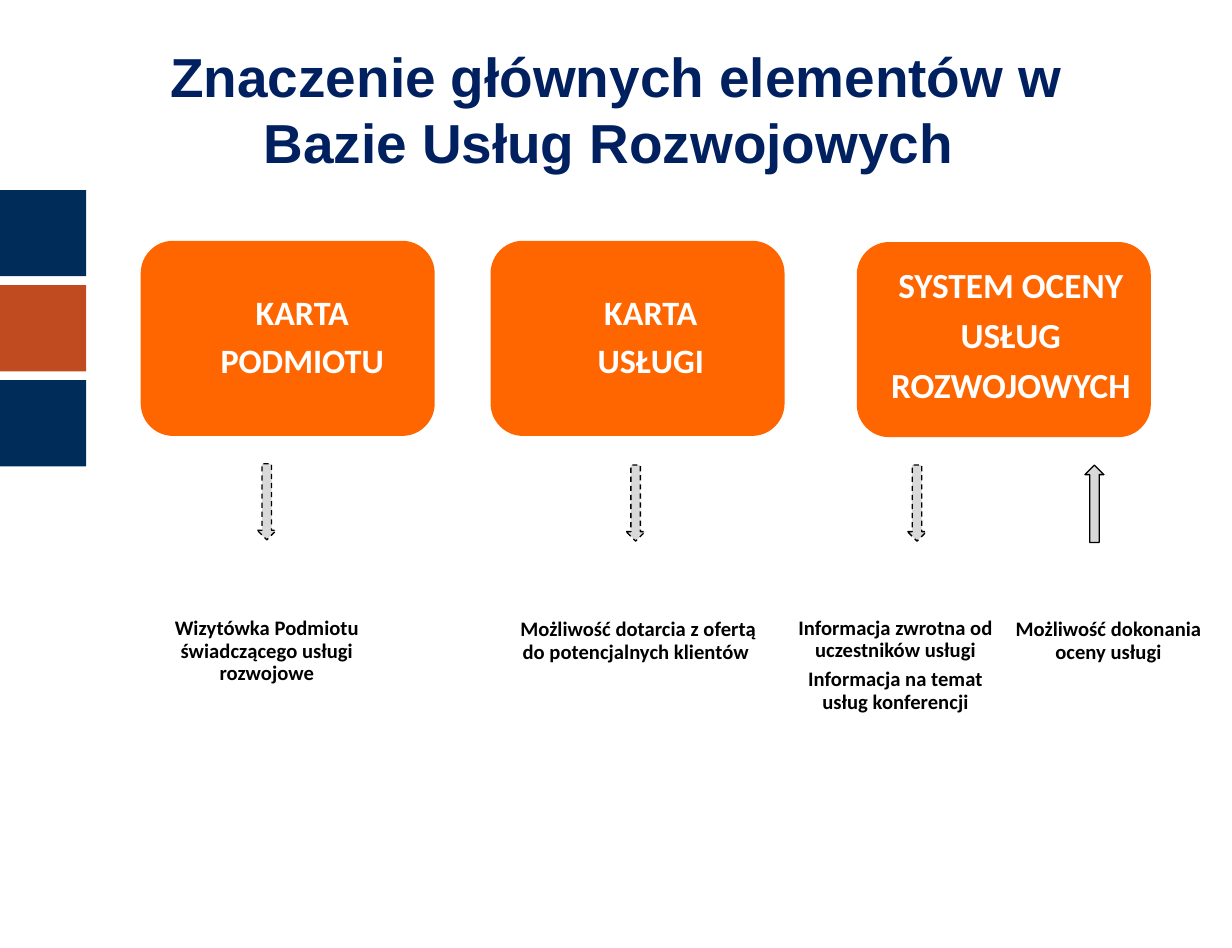
from pptx import Presentation
from pptx.dml.color import RGBColor
from pptx.enum.dml import MSO_LINE
from pptx.enum.shapes import MSO_SHAPE
from pptx.enum.text import MSO_ANCHOR, PP_ALIGN
from pptx.util import Inches, Pt

NAVY, RUST, ORANGE, GREY = "002C5A", "C14B20", "FF6600", "D9D9D9"
WHITE, BLACK, INK = "FFFFFF", "000000", "002060"

TITLE = "Znaczenie głównych elementów w Bazie Usług Rozwojowych "

# left, top, text offset (x, y), size, lines
CARDS = [
    (1.11, 1.9, 0.23, 0.06, 19.4, ["KARTA", "PODMIOTU"]),
    (3.87, 1.9, 0.22, 0.06, 19.4, ["KARTA", "USŁUGI"]),
    (6.76, 1.91, 0.17, 0.04, 20, ["SYSTEM OCENY", "USŁUG", "ROZWOJOWYCH"]),
]

# left, top, points up
ARROWS = [(2.03, 3.66, False), (4.94, 3.67, False),
          (7.16, 3.67, False), (8.56, 3.67, True)]

# left, top, width, lines
NOTES = [
    (1.06, 4.43, 2.09, ["Wizytówka Podmiotu świadczącego usługi rozwojowe"]),
    (3.99, 4.35, 2.09,
     ["Możliwość dotarcia z ofertą do potencjalnych klientów "]),
    (6.21, 4.54, 1.71, ["Informacja zwrotna od uczestników usługi",
                        "Informacja na temat usług konferencji"]),
    (7.89, 4.35, 1.71, ["Możliwość dokonania oceny usługi"]),
]


def color(code):
    return RGBColor.from_string(code)


def assign(item, values):
    for name, value in values.items():
        setattr(item, name, value)


def add_shape(slide, kind, box, fill):
    """Add a filled shape with no outline and no shadow."""
    shape = slide.shapes.add_shape(kind, *map(Inches, box))
    shape.shadow.inherit = False
    shape.fill.solid()
    shape.fill.fore_color.rgb = color(fill)
    shape.line.fill.background()
    return shape


def add_text(slide, box, lines, font, frame, para):
    """Add a wrapped, centred text box with one paragraph a line."""
    body = slide.shapes.add_textbox(*map(Inches, box)).text_frame
    assign(body, {"word_wrap": True, **frame})
    body.text = "\n".join(lines)
    for part in body.paragraphs:
        assign(part, {"alignment": PP_ALIGN.CENTER, **para})
        run = part.runs[0]
        assign(run.font, {"name": font["name"], "size": Pt(font["size"]),
                          "bold": True})
        run.font.color.rgb = color(font["ink"])


def add_label(slide, box, lines, size, ink):
    """Add tight Calibri text, centred both ways."""
    sides = ("left", "top", "right", "bottom")
    frame = {f"margin_{side}": Inches(0.06) for side in sides}
    frame["vertical_anchor"] = MSO_ANCHOR.MIDDLE
    para = {"line_spacing": 0.9, "space_after": Pt(round(size * 0.35, 1))}
    font = {"name": "Calibri", "size": size, "ink": ink}
    add_text(slide, box, lines, font, frame, para)


def add_title(slide, box):
    add_text(slide, box, [TITLE],
             {"name": "Arial", "size": 31.2, "ink": INK}, {}, {})


def add_blocks(slide, left, top):
    """Stack the coloured squares at the slide edge."""
    for row, fill in enumerate((NAVY, RUST, NAVY)):
        box = (left, top + row * 0.75, 0.68, 0.68)
        add_shape(slide, MSO_SHAPE.RECTANGLE, box, fill)


def add_card(slide, left, top, dx, dy, size, lines):
    add_shape(slide, MSO_SHAPE.ROUNDED_RECTANGLE,
              (left, top, 2.32, 1.54), ORANGE)
    add_label(slide, (left + dx, top + dy, 2.09, 1.42), lines, size, WHITE)


def add_arrow(slide, left, top, up):
    """Add a block arrow: solid outline upwards, dashed downwards."""
    kind = MSO_SHAPE.UP_ARROW if up else MSO_SHAPE.DOWN_ARROW
    arrow = add_shape(slide, kind, (left, top, 0.15, 0.61 if up else 0.6), GREY)
    arrow.line.color.rgb = color(BLACK)
    dash = MSO_LINE.SOLID if up else MSO_LINE.DASH
    assign(arrow.line, {"width": Pt(0.75), "dash_style": dash})


def add_note(slide, left, top, width, lines):
    add_label(slide, (left, top, width, 1.42), lines, 11.7, BLACK)


def main():
    deck = Presentation()
    assign(deck, {"slide_width": Inches(9.72), "slide_height": Inches(7.48)})
    slide = deck.slides.add_slide(deck.slide_layouts[6])
    add_blocks(slide, 0, 1.5)
    add_title(slide, (0.73, 0.29, 8.26, 0.81))
    for add, items in ((add_card, CARDS), (add_arrow, ARROWS),
                       (add_note, NOTES)):
        for item in items:
            add(slide, *item)
    deck.save("out.pptx")


if __name__ == "__main__":
    main()
